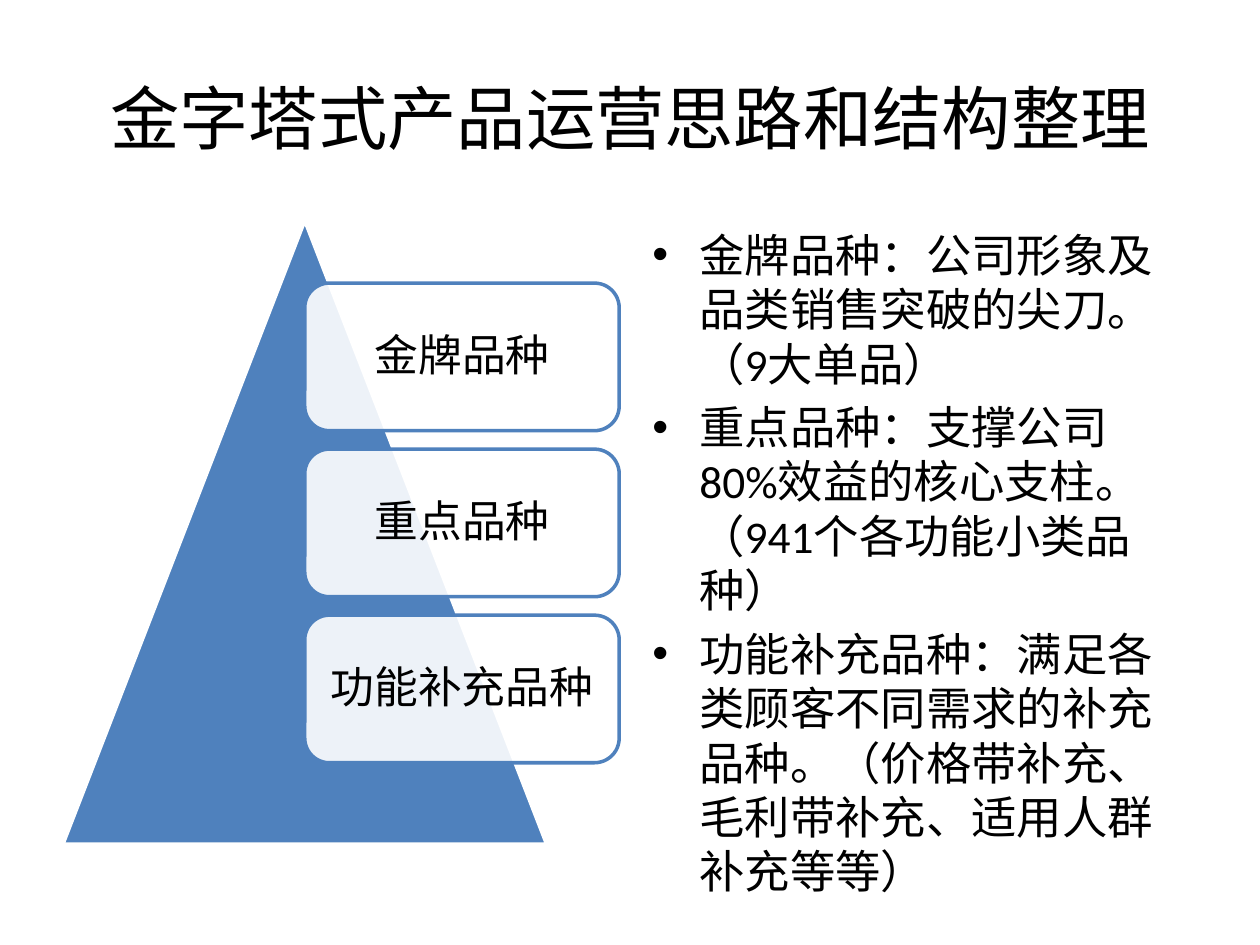
from lxml import etree
from pptx import Presentation
from pptx.dml.color import RGBColor
from pptx.enum.shapes import MSO_SHAPE as Shape
from pptx.enum.text import MSO_ANCHOR as Anchor, MSO_AUTO_SIZE as AutoSize, PP_ALIGN as Align
from pptx.oxml.ns import qn
from pptx.util import Cm, Pt

COLORS = {"text": "000000", "accent": "4F81BD", "white": "FFFFFF"}
FONT = "Calibri"
TITLE = "金字塔式产品运营思路和结构整理"
TIERS = ["金牌品种", "重点品种", "功能补充品种"]
DETAILS = [
    ["金牌品种：公司形象及品类销售突破的尖刀。", "（9大单品）"],
    ["重点品种：支撑公司80%效益的核心支柱。", "（941个各功能小类品种）"],
    ["功能补充品种：满足各类顾客不同需求的补充品种。",
     "（价格带补充、毛利带补充、适用人群补充等等）"],
]


def color(name):
    return RGBColor.from_string(COLORS[name])


def add_run(paragraph, text, size):
    run = paragraph.add_run()
    run.text = text
    run.font.name = FONT
    run.font.size = Pt(size)
    run.font.color.rgb = color("text")


def add_panel(slide, preset, box, fill, line):
    shape = slide.shapes.add_shape(preset, *map(Cm, box))
    shape.shadow.inherit = False
    shape.fill.solid()
    shape.fill.fore_color.rgb = color(fill)
    shape.line.color.rgb = color(line)
    shape.line.width = Pt(2)
    return shape


def set_opacity(shape, percent):
    fill_color = shape.fill._xPr.find(qn("a:solidFill"))[0]
    etree.SubElement(fill_color, qn("a:alpha")).set("val", str(percent * 1000))


def add_bullet(paragraph, indent):
    properties = paragraph._p.get_or_add_pPr()
    properties.set("marL", str(Cm(indent)))
    properties.set("indent", str(-Cm(indent)))
    etree.SubElement(properties, qn("a:buFont")).set("typeface", "Arial")
    etree.SubElement(properties, qn("a:buChar")).set("char", "•")


def place_title(slide, box):
    title = slide.shapes.title
    title.left, title.top, title.width, title.height = map(Cm, box)
    frame = title.text_frame
    frame.vertical_anchor = Anchor.MIDDLE
    frame.auto_size = AutoSize.NONE
    paragraph = frame.paragraphs[0]
    paragraph.alignment = Align.CENTER
    add_run(paragraph, TITLE, 39.6)


def add_pyramid(slide, box):
    """Triangle with the tier labels stacked rightwards from its axis."""
    left, top, width, height = box
    add_panel(slide, Shape.ISOSCELES_TRIANGLE, box, "accent", "white")
    label_width, label_height = 0.65 * width, 0.71 * height / len(TIERS)
    pitch = label_height * 9 / 8
    for index, tier in enumerate(TIERS):
        label_box = (left + width / 2, top + height / 10 + index * pitch,
                     label_width, label_height)
        label = add_panel(slide, Shape.ROUNDED_RECTANGLE, label_box, "white", "accent")
        set_opacity(label, 90)
        frame = label.text_frame
        frame.word_wrap = True
        frame.vertical_anchor = Anchor.MIDDLE
        frame.margin_left = frame.margin_right = Cm(0.25)
        frame.margin_top = frame.margin_bottom = Cm(0.25)
        paragraph = frame.paragraphs[0]
        paragraph.alignment = Align.CENTER
        paragraph.line_spacing = 0.9
        add_run(paragraph, tier, 25)


def add_details(slide, box):
    frame = slide.shapes.add_textbox(*map(Cm, box)).text_frame
    frame.word_wrap = True
    for index, parts in enumerate(DETAILS):
        paragraph = frame.add_paragraph() if index else frame.paragraphs[0]
        paragraph.space_before = Pt(5.2)
        add_bullet(paragraph, 0.95)
        for part in parts:
            add_run(paragraph, part, 25.9)


def main():
    presentation = Presentation()
    presentation.slide_width, presentation.slide_height = Cm(25.4), Cm(19.05)
    slide = presentation.slides.add_slide(presentation.slide_layouts[5])
    place_title(slide, (1.27, 0.76, 22.86, 3.18))
    add_pyramid(slide, (1.27, 4.45, 9.75, 12.57))
    add_details(slide, (12.9, 4.45, 11.23, 12.57))
    presentation.save("out.pptx")


if __name__ == "__main__":
    main()
